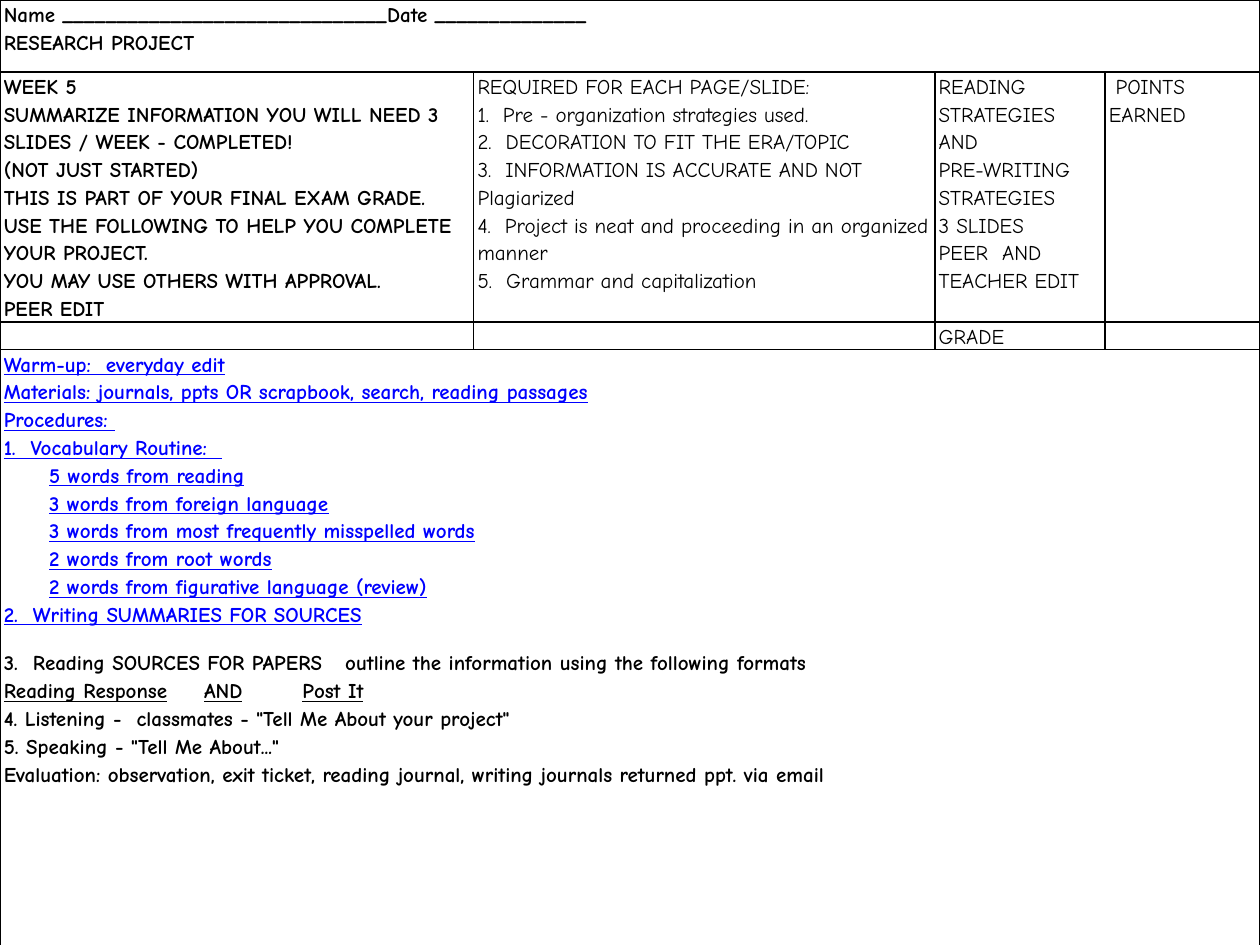
"""Build a weekly research project sheet as one bordered table."""
from lxml.etree import SubElement
from pptx import Presentation
from pptx.dml.color import RGBColor
from pptx.oxml.ns import qn
from pptx.util import Inches, Pt

FONT = "Comic Neue"
SIZE = 12
BLACK = RGBColor(0, 0, 0)
BLUE = RGBColor(0, 0, 255)
WHITE = RGBColor(255, 255, 255)

COLUMNS = [3.76, 3.66, 1.35, 1.23]
ROWS = [0.57, 1.98, 0.22, 4.8]
FULL_WIDTH_ROWS = [0, 3]

HEADING = ["Name ______________________________Date ______________", "RESEARCH PROJECT"]
WEEK = [
    "WEEK 5",
    "SUMMARIZE INFORMATION YOU WILL NEED 3 SLIDES / WEEK - COMPLETED!",
    "(NOT JUST STARTED)",
    "THIS IS PART OF YOUR FINAL EXAM GRADE.",
    "USE THE FOLLOWING TO HELP YOU COMPLETE YOUR PROJECT.",
    "YOU MAY USE OTHERS WITH APPROVAL.",
    "PEER EDIT",
]
REQUIRED = [
    "REQUIRED FOR EACH PAGE/SLIDE:",
    "1.  Pre - organization strategies used.",
    "2.  DECORATION TO FIT THE ERA/TOPIC",
    "3.  INFORMATION IS ACCURATE AND NOT Plagiarized",
    "4.  Project is neat and proceeding in an organized manner",
    "5.  Grammar and capitalization",
]
STRATEGIES = [
    "READING STRATEGIES AND", "PRE-WRITING STRATEGIES", "3 SLIDES",
    "PEER  AND", "TEACHER EDIT",
]
PREPARATION = [
    "Warm-up:  everyday edit",
    "Materials: journals, ppts OR scrapbook, search, reading passages",
    "Procedures: ",
    "1.  Vocabulary Routine:  ",
]
VOCABULARY = [
    "5 words from reading",
    "3 words from foreign language",
    "3 words from most frequently misspelled words",
    "2 words from root words",
    "2 words from figurative language (review)",
]
WRITING = "2.  Writing SUMMARIES FOR SOURCES"
READING = "3.  Reading SOURCES FOR PAPERS\toutline the information using the following formats"
FORMATS = "Reading Response\tAND\tPost It"
CLOSING = [
    "4. Listening -  classmates - \"Tell Me About your project\"",
    "5. Speaking - \"Tell Me About...\"",
    "Evaluation: observation, exit ticket, reading journal, writing journals returned ppt. via email",
]

PLAIN = {}
BOLD = {"bold": True}
LINK = {"bold": True, "underline": True, "color": BLUE}

LESSON = (
    [(text, LINK) for text in PREPARATION]
    + [("\t" + text, {**LINK, "tabs": [0.36]}) for text in VOCABULARY]
    + [(WRITING, {**LINK, "after": 12}),
       (READING, {**BOLD, "tabs": [2.71]}),
       (FORMATS, {**BOLD, "underline": True, "tabs": [1.59, 2.37]})]
    + [(text, BOLD) for text in CLOSING]
)
CELLS = {
    (0, 0): [(text, BOLD) for text in HEADING],
    (1, 0): [(text, BOLD) for text in WEEK],
    (1, 1): [(text, PLAIN) for text in REQUIRED],
    (1, 2): [(text, PLAIN) for text in STRATEGIES],
    (1, 3): [(" POINTS EARNED", PLAIN)],
    (2, 2): [("GRADE", PLAIN)],
    (3, 0): LESSON,
}


def write(para, text, bold=False, underline=False, color=BLACK, after=0, tabs=()):
    para.line_spacing = 1.15
    para.space_after = Pt(after)
    if tabs:
        stops = SubElement(para._p.get_or_add_pPr(), qn("a:tabLst"))
        for position in tabs:
            SubElement(stops, qn("a:tab"), pos=str(Inches(position)), algn="l")
    span = para.add_run()
    span.text = text
    span.font.name = FONT
    span.font.size = Pt(SIZE)
    span.font.bold = bold
    span.font.underline = underline
    span.font.color.rgb = color


def style_cell(cell):
    cell.margin_left = cell.margin_right = Inches(0.03)
    cell.margin_top = cell.margin_bottom = 0
    properties = cell._tc.get_or_add_tcPr()
    for side in ("a:lnL", "a:lnR", "a:lnT", "a:lnB"):
        line = SubElement(properties, qn(side), w=str(Pt(1)))
        fill = SubElement(line, qn("a:solidFill"))
        SubElement(fill, qn("a:srgbClr"), val=str(BLACK))
    cell.fill.solid()
    cell.fill.fore_color.rgb = WHITE


def fill_cell(cell, lines):
    frame = cell.text_frame
    if not lines:
        SubElement(frame.paragraphs[0]._p, qn("a:endParaRPr"), sz=str(SIZE * 100))
    for index, (text, style) in enumerate(lines):
        para = frame.add_paragraph() if index else frame.paragraphs[0]
        write(para, text, **style)


def main():
    deck = Presentation()
    deck.slide_width, deck.slide_height = Inches(10), Inches(7.5)
    page = deck.slides.add_slide(deck.slide_layouts[6])
    table = page.shapes.add_table(
        len(ROWS), len(COLUMNS), 0, 0, Inches(sum(COLUMNS)), Inches(sum(ROWS))
    ).table
    table.first_row = table.horz_banding = False
    for column, width in zip(table.columns, COLUMNS):
        column.width = Inches(width)
    for row, height in zip(table.rows, ROWS):
        row.height = Inches(height)
    for row in FULL_WIDTH_ROWS:
        table.cell(row, 0).merge(table.cell(row, len(COLUMNS) - 1))
    for row in range(len(ROWS)):
        for column in range(len(COLUMNS)):
            cell = table.cell(row, column)
            style_cell(cell)
            fill_cell(cell, CELLS.get((row, column), []))
    deck.save("out.pptx")


if __name__ == "__main__":
    main()
